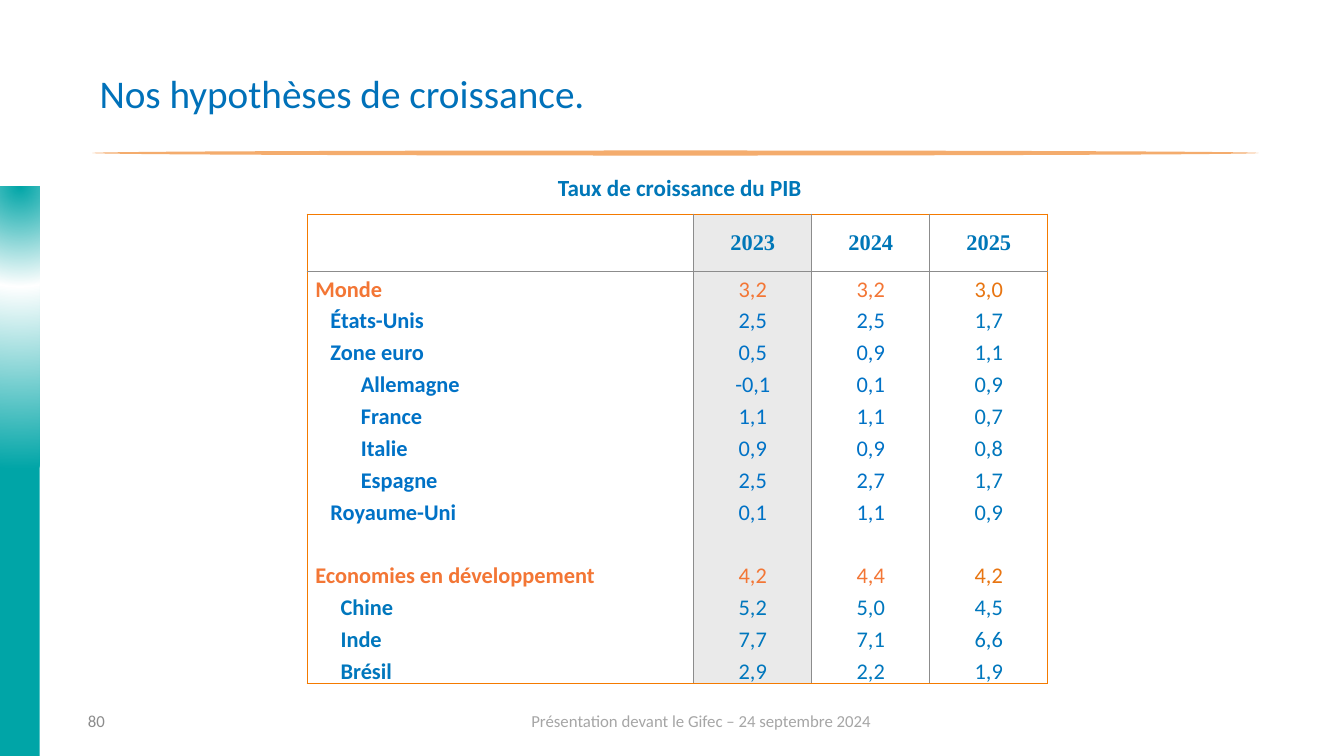
from lxml import etree
from pptx import Presentation
from pptx.dml.color import RGBColor
from pptx.enum.shapes import MSO_SHAPE
from pptx.enum.text import MSO_ANCHOR, PP_ALIGN
from pptx.oxml import parse_xml
from pptx.oxml.ns import nsdecls, qn
from pptx.util import Pt

LEFT, CENTER, RIGHT = PP_ALIGN.LEFT, PP_ALIGN.CENTER, PP_ALIGN.RIGHT
JUSTIFY = PP_ALIGN.JUSTIFY
TOP, MIDDLE = MSO_ANCHOR.TOP, MSO_ANCHOR.MIDDLE
RECT, OVAL = MSO_SHAPE.RECTANGLE, MSO_SHAPE.OVAL

TITLE_BLUE = RGBColor(0x00, 0x71, 0xB9)
HEAD_BLUE = RGBColor(0x00, 0x77, 0xB8)
BLUE = RGBColor(0x00, 0x72, 0xC6)
SEA_BLUE = RGBColor(0x00, 0x77, 0xBD)
ORANGE = RGBColor(0xF3, 0x76, 0x35)
DARK_ORANGE = RGBColor(0xE8, 0x75, 0x11)
RULE_ORANGE = RGBColor(0xF4, 0xAC, 0x6D)
FRAME_ORANGE = RGBColor(0xF4, 0x7A, 0x00)
GRID_GREY = RGBColor(0x8C, 0x8C, 0x8C)
FOOTER_GREY = RGBColor(0xA6, 0xA6, 0xA6)
SHADE = RGBColor(0xEA, 0xEA, 0xEA)
TEAL = RGBColor(0x00, 0xA5, 0xA7)
WHITE = RGBColor(0xFF, 0xFF, 0xFF)

SANS, SERIF = "Calibri", "Times New Roman"
TABLE_SIZE, LINE_GAP, GROUP_GAP = 16, 3.2, 25.9

# Each group: heading row, then its members; a row is (label, indent, values).
ADVANCED = [
    ("Monde", 0, ("3,2", "3,2", "3,0")),
    ("États-Unis", 10.8, ("2,5", "2,5", "1,7")),
    ("Zone euro", 10.8, ("0,5", "0,9", "1,1")),
    ("Allemagne", 32.5, ("-0,1", "0,1", "0,9")),
    ("France", 32.5, ("1,1", "1,1", "0,7")),
    ("Italie", 32.5, ("0,9", "0,9", "0,8")),
    ("Espagne", 32.5, ("2,5", "2,7", "1,7")),
    ("Royaume-Uni", 10.8, ("0,1", "1,1", "0,9")),
]
EMERGING = [
    ("Economies en développement", 0, ("4,2", "4,4", "4,2")),
    ("Chine", 18, ("5,2", "5,0", "4,5")),
    ("Inde", 18, ("7,7", "7,1", "6,6")),
    ("Brésil", 18, ("2,9", "2,2", "1,9")),
]
# Year, heading colour, colour of the members of each group
YEARS = [
    ("2023", ORANGE, (BLUE, SEA_BLUE)),
    ("2024", ORANGE, (BLUE, SEA_BLUE)),
    ("2025", DARK_ORANGE, (SEA_BLUE, SEA_BLUE)),
]


def add_run(p, text, size, color, font=SANS, bold=False):
    r = p.add_run()
    r.text = text
    r.font.size, r.font.name, r.font.bold = Pt(size), font, bold
    r.font.color.rgb = color


def add_text(s, box, text, size, color, align, anchor=MIDDLE, bold=False):
    tf = s.shapes.add_textbox(*map(Pt, box)).text_frame
    tf.word_wrap = True
    tf.vertical_anchor = anchor
    p = tf.paragraphs[0]
    p.alignment = align
    add_run(p, text, size, color, bold=bold)
    return p


def add_plain_shape(s, kind, box, color):
    sp = s.shapes.add_shape(kind, *map(Pt, box))
    sp.shadow.inherit = False
    sp.fill.solid()
    sp.fill.fore_color.rgb = color
    sp.line.fill.background()
    return sp


def add_side_band(s, box):
    """Teal band with a white glow radiating from above it."""
    spPr = add_plain_shape(s, RECT, box, TEAL)._element.spPr
    stops = "".join(
        f'<a:gs pos="{pos * 1000}"><a:srgbClr val="{color}"/></a:gs>'
        for pos, color in ((0, TEAL), (35, WHITE), (99, TEAL)))
    gradient = parse_xml(
        f'<a:gradFill {nsdecls("a")}><a:gsLst>{stops}</a:gsLst>'
        '<a:path path="circle"><a:fillToRect l="50000" t="-80000" '
        'r="50000" b="180000"/></a:path></a:gradFill>')
    spPr.replace(spPr.find(qn("a:solidFill")), gradient)


def add_header(s, box):
    x, y, w, h = box
    p = add_text(s, box, "Nos hypothèses de croissance.", 28, TITLE_BLUE, JUSTIFY)
    p.line_spacing = 0.9
    add_plain_shape(s, OVAL, (x + 2, y + h - 13, w + 6, 3.6), RULE_ORANGE)


def set_borders(cell, row, col, last_row, last_col):
    """Orange around the table, thin grey between its cells."""
    tcPr = cell._tc.get_or_add_tcPr()
    outer = {"L": col == 0, "R": col == last_col,
             "T": row == 0, "B": row == last_row}
    for i, (side, is_outer) in enumerate(outer.items()):
        color, width = (FRAME_ORANGE, 1) if is_outer else (GRID_GREY, 0.75)
        ln = etree.Element(qn(f"a:ln{side}"), w=str(Pt(width)))
        fill = etree.SubElement(ln, qn("a:solidFill"))
        etree.SubElement(fill, qn("a:srgbClr"), val=str(color))
        tcPr.insert(i, ln)


def fill_column(cell, lines, align, bold):
    """Write (text, color, indent, space before) lines into one cell."""
    tf = cell.text_frame
    for i, (text, color, indent, before) in enumerate(lines):
        p = tf.add_paragraph() if i else tf.paragraphs[0]
        p.alignment = align
        if i:
            p.space_before = Pt(before)
        if indent:
            p._p.get_or_add_pPr().set("marL", str(Pt(indent)))
        add_run(p, text, TABLE_SIZE, color, bold=bold)


def column_lines(pick, heading_color, member_colors):
    lines = []
    for group, member_color in zip((ADVANCED, EMERGING), member_colors):
        for i, row in enumerate(group):
            text, indent = pick(row)
            color = member_color if i else heading_color
            lines.append((text, color, indent, LINE_GAP if i else GROUP_GAP))
    return lines


def add_growth_table(s, box):
    x, y, w, h = box
    caption_h, head_h, year_w = 32.8, 41, 84.3
    add_text(s, (x + 17, y, w - 31, 27), "Taux de croissance du PIB", 16.5,
             HEAD_BLUE, CENTER, TOP, True)
    frame = s.shapes.add_table(2, 4, Pt(x), Pt(y + caption_h), Pt(w),
                               Pt(h - caption_h))
    table = frame.table
    table.first_row = table.horz_banding = False
    for i, col in enumerate(table.columns):
        col.width = Pt(year_w if i else w - 3 * year_w)
    table.rows[0].height = Pt(head_h)
    table.rows[1].height = Pt(h - caption_h - head_h)

    for row in range(2):
        for col in range(4):
            cell = table.cell(row, col)
            cell.margin_left = cell.margin_right = Pt(5.8)
            cell.margin_top = Pt(2.9)
            cell.margin_bottom = Pt(0 if row else 2.9)
            cell.vertical_anchor = TOP if row else MIDDLE
            if col == 1:
                cell.fill.solid()
                cell.fill.fore_color.rgb = SHADE
            else:
                cell.fill.background()
            set_borders(cell, row, col, 1, 3)

    labels = column_lines(lambda row: row[:2], ORANGE, (BLUE, SEA_BLUE))
    fill_column(table.cell(1, 0), labels, LEFT, True)
    for i, (year, heading, members) in enumerate(YEARS):
        p = table.cell(0, i + 1).text_frame.paragraphs[0]
        p.alignment = CENTER
        add_run(p, year, TABLE_SIZE, HEAD_BLUE, SERIF, True)
        values = column_lines(lambda row: (row[2][i], 0), heading, members)
        fill_column(table.cell(1, i + 1), values, CENTER, False)


def add_footer(s, box):
    x, y, w, h = box
    add_text(s, (x + 277, y, w - 277, h),
             "Présentation devant le Gifec – 24 septembre 2024", 12,
             FOOTER_GREY, CENTER)
    add_text(s, (x, y, 41, h), "80", 12, GRID_GREY, RIGHT)


def main():
    prs = Presentation()
    prs.slide_width, prs.slide_height = Pt(960), Pt(540)
    s = prs.slides.add_slide(prs.slide_layouts[6])
    add_side_band(s, (0, 133, 28.4, 408))
    add_header(s, (64, 16, 827, 104.5))
    add_growth_table(s, (219.5, 120.2, 529, 368))
    add_footer(s, (41, 500.5, 643, 29))
    prs.save("out.pptx")


if __name__ == "__main__":
    main()
